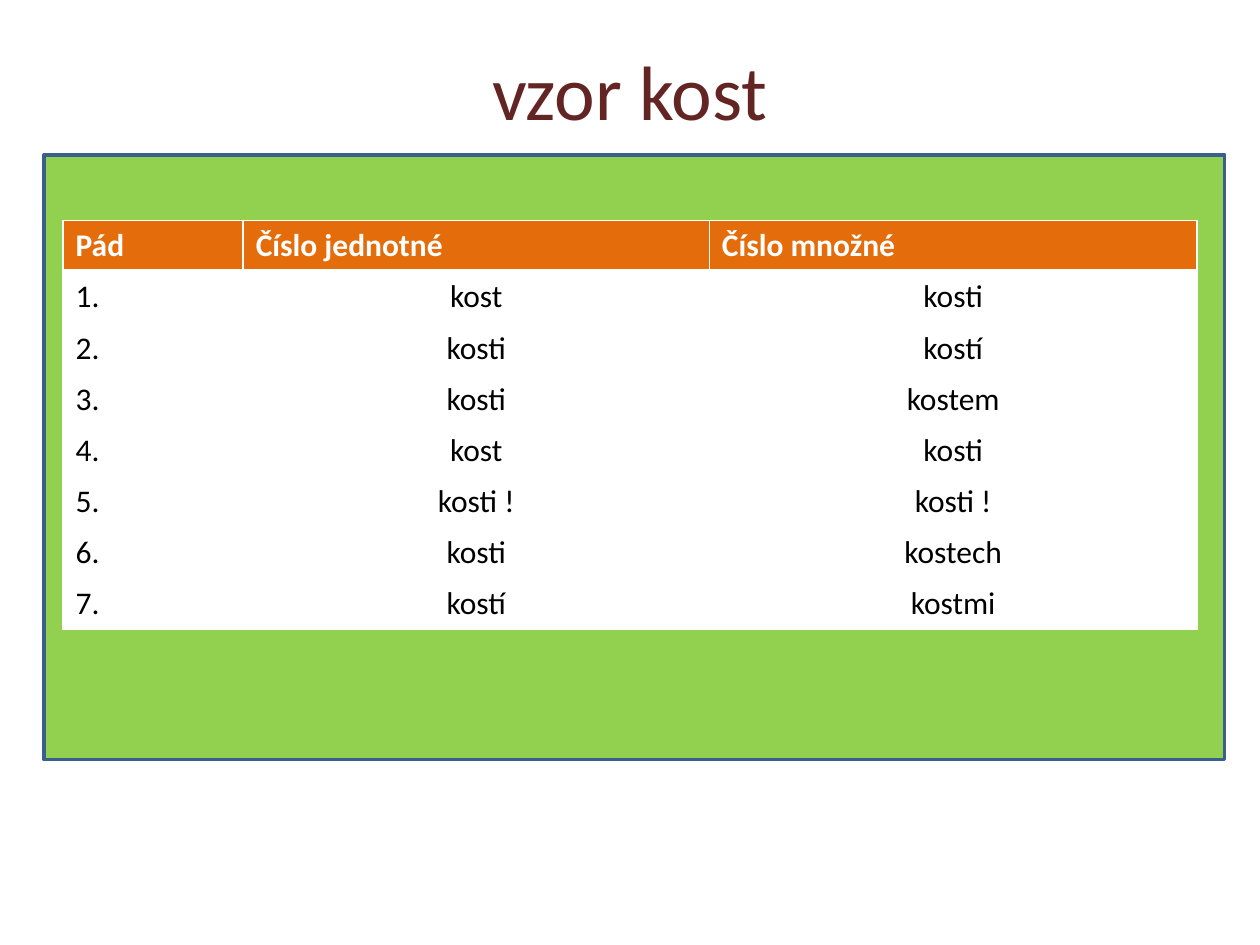
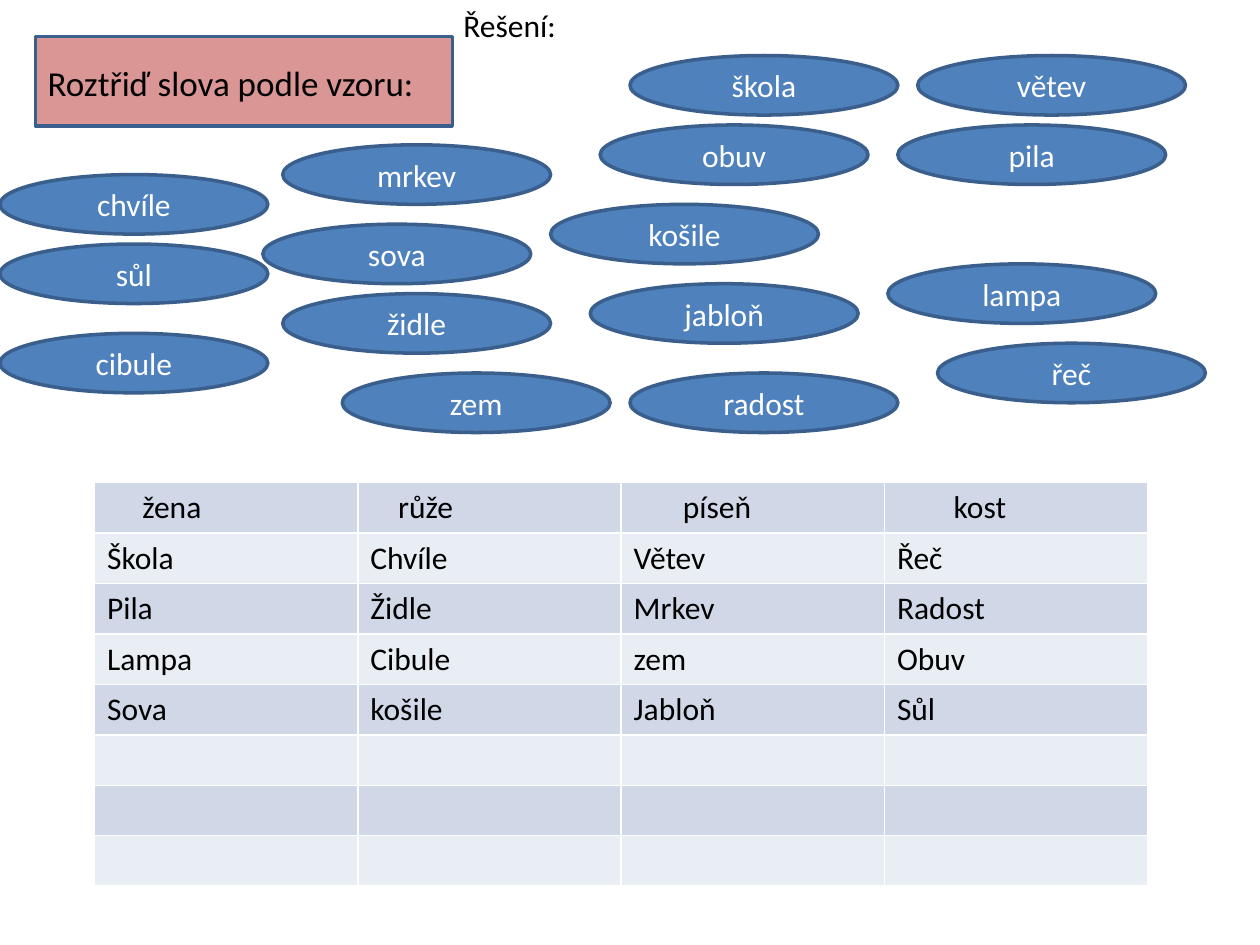
"""Build two slides on Czech feminine noun patterns: the kost table and a sorting exercise."""
import lxml.etree
import pptx
import pptx.dml.color
import pptx.enum.shapes
import pptx.enum.text
import pptx.oxml.ns
import pptx.util

RGBColor = pptx.dml.color.RGBColor
WHITE = RGBColor(0xFF, 0xFF, 0xFF)
BLACK = RGBColor(0, 0, 0)
MAROON = RGBColor(0x63, 0x25, 0x23)
GREEN = RGBColor(0x92, 0xD0, 0x50)
ORANGE = RGBColor(0xE4, 0x6C, 0x0A)
PINK = RGBColor(0xD9, 0x96, 0x94)
BLUE = RGBColor(0x4F, 0x81, 0xBD)
OUTLINE = RGBColor(0x3A, 0x5F, 0x8C)
BANDS = (RGBColor(0xD0, 0xD8, 0xE8), RGBColor(0xE9, 0xED, 0xF4))

Inches, Pt, Mm = pptx.util.Inches, pptx.util.Pt, pptx.util.Mm
SHAPES = pptx.enum.shapes.MSO_SHAPE
CENTER = pptx.enum.text.PP_ALIGN.CENTER
MIDDLE = pptx.enum.text.MSO_ANCHOR.MIDDLE

TITLE_FONT = {"size": Pt(44)}
TASK_FONT = {"size": Pt(20)}
BODY_FONT = {"name": "Calibri", "size": Pt(18), "bold": False}
HEADER_FONT = {"bold": True}

CASES = [
    ("Pád", "Číslo jednotné", "Číslo množné"),
    ("1.", "kost", "kosti"),
    ("2.", "kosti", "kostí"),
    ("3.", "kosti", "kostem"),
    ("4.", "kost", "kosti"),
    ("5.", "kosti !", "kosti !"),
    ("6.", "kosti", "kostech"),
    ("7.", "kostí", "kostmi"),
]
CASE_COLUMNS = (1.43, 3.7, 3.87)

SOLUTION = {
    "žena": ("Škola", "Pila", "Lampa", "Sova"),
    "růže": ("Chvíle", "Židle", "Cibule", "košile"),
    "píseň": ("Větev", "Mrkev", "zem", "Jabloň"),
    "kost": ("Řeč", "Radost", "Obuv", "Sůl"),
}
PATTERN_INDENTS = (0.28, 0.22, 0.39, 0.45)
SPARE_ROWS = 3
SOLUTION_COLUMNS = (2.09,) * len(SOLUTION)

WORDS = [
    ("sova", 53, 45), ("mrkev", 57, 29), ("židle", 57, 59), ("sůl", 0, 49),
    ("chvíle", 0, 35), ("jabloň", 119, 57), ("lampa", 179, 53),
    ("košile", 111, 41), ("obuv", 121, 25), ("škola", 127, 11),
    ("pila", 181, 25), ("větev", 185, 11), ("řeč", 189, 69),
    ("cibule", 0, 67), ("radost", 127, 75), ("zem", 69, 75),
]
WORD_SIZE = (54, 12)
WORD_TOP_SHIFT = 0.2


def write(frame, text, color, align=None, **formats):
    para = frame.paragraphs[0]
    para.alignment = align
    span = para.add_run()
    span.text = text
    for name, value in {**BODY_FONT, **formats}.items():
        setattr(span.font, name, value)
    span.font.color.rgb = color


def add_text(page, place, text, color, align=None, **formats):
    box = page.shapes.add_textbox(*map(Inches, place))
    box.text_frame.word_wrap = True
    write(box.text_frame, text, color, align, **formats)


def add_panel(page, kind, place, color):
    panel = page.shapes.add_shape(kind, *place)
    panel.shadow.inherit = False
    panel.fill.solid()
    panel.fill.fore_color.rgb = color
    panel.line.color.rgb = OUTLINE
    panel.line.width = Pt(2)
    return panel


def add_borders(cell, bottom):
    properties = cell._tc.get_or_add_tcPr()
    qn = pptx.oxml.ns.qn
    for side, width in (("L", 1), ("R", 1), ("T", 1), ("B", bottom)):
        line = lxml.etree.SubElement(properties, qn("a:ln" + side), w=str(Pt(width)))
        fill = lxml.etree.SubElement(line, qn("a:solidFill"))
        lxml.etree.SubElement(fill, qn("a:srgbClr"), val=str(WHITE))


def add_grid(page, left, top, height, widths, row_count):
    place = map(Inches, (left, top, sum(widths), height))
    table = page.shapes.add_table(row_count, len(widths), *place).table
    table.first_row = table.horz_banding = False
    for column, width in zip(table.columns, widths):
        column.width = Inches(width)
    return table


def fill_cell(cell, color, bottom=1):
    add_borders(cell, bottom)
    cell.fill.solid()
    cell.fill.fore_color.rgb = color


def build_pattern(page):
    place = map(Inches, (0.35, 1.23, 9.37, 4.8))
    add_panel(page, SHAPES.RECTANGLE, place, GREEN)
    add_text(page, (0.5, 0.3, 9, 1.25), "vzor kost", MAROON, CENTER, **TITLE_FONT)
    table = add_grid(page, 0.5, 1.75, 3.25, CASE_COLUMNS, len(CASES))
    for row, texts in enumerate(CASES):
        for column, text in enumerate(texts):
            cell = table.cell(row, column)
            if row == 0:
                fill_cell(cell, ORANGE, bottom=3)
                write(cell.text_frame, text, WHITE, **HEADER_FONT)
            else:
                fill_cell(cell, WHITE)
                write(cell.text_frame, text, BLACK, CENTER if column else None)


def build_exercise(page):
    place = map(Inches, (0.28, 0.29, 3.31, 0.71))
    add_panel(page, SHAPES.RECTANGLE, place, PINK)
    add_text(page, (0.28, 0.44, 7.32, 0.44), "Roztřiď slova podle vzoru:", BLACK, **TASK_FONT)
    for word, left, top in WORDS:
        place = map(Mm, (left, top + WORD_TOP_SHIFT, *WORD_SIZE))
        oval = add_panel(page, SHAPES.OVAL, place, BLUE)
        oval.text_frame.vertical_anchor = MIDDLE
        write(oval.text_frame, word, WHITE, CENTER)
    row_count = 1 + len(SOLUTION["žena"]) + SPARE_ROWS
    table = add_grid(page, 0.75, 3.83, 3.2, SOLUTION_COLUMNS, row_count)
    for column, (pattern, nouns) in enumerate(SOLUTION.items()):
        texts = (pattern, *nouns, *[""] * SPARE_ROWS)
        for row, text in enumerate(texts):
            cell = table.cell(row, column)
            fill_cell(cell, BANDS[row % 2])
            if text:
                write(cell.text_frame, text, BLACK)
        table.cell(0, column).margin_left = Inches(0.1 + PATTERN_INDENTS[column])
    add_text(page, (3.58, 0, 1.34, 0.4), "Řešení:", BLACK)


def main():
    deck = pptx.Presentation()
    deck.slide_width, deck.slide_height = Inches(10), Inches(7.5)
    for build in (build_pattern, build_exercise):
        build(deck.slides.add_slide(deck.slide_layouts[6]))
    deck.save("out.pptx")


if __name__ == "__main__":
    main()
